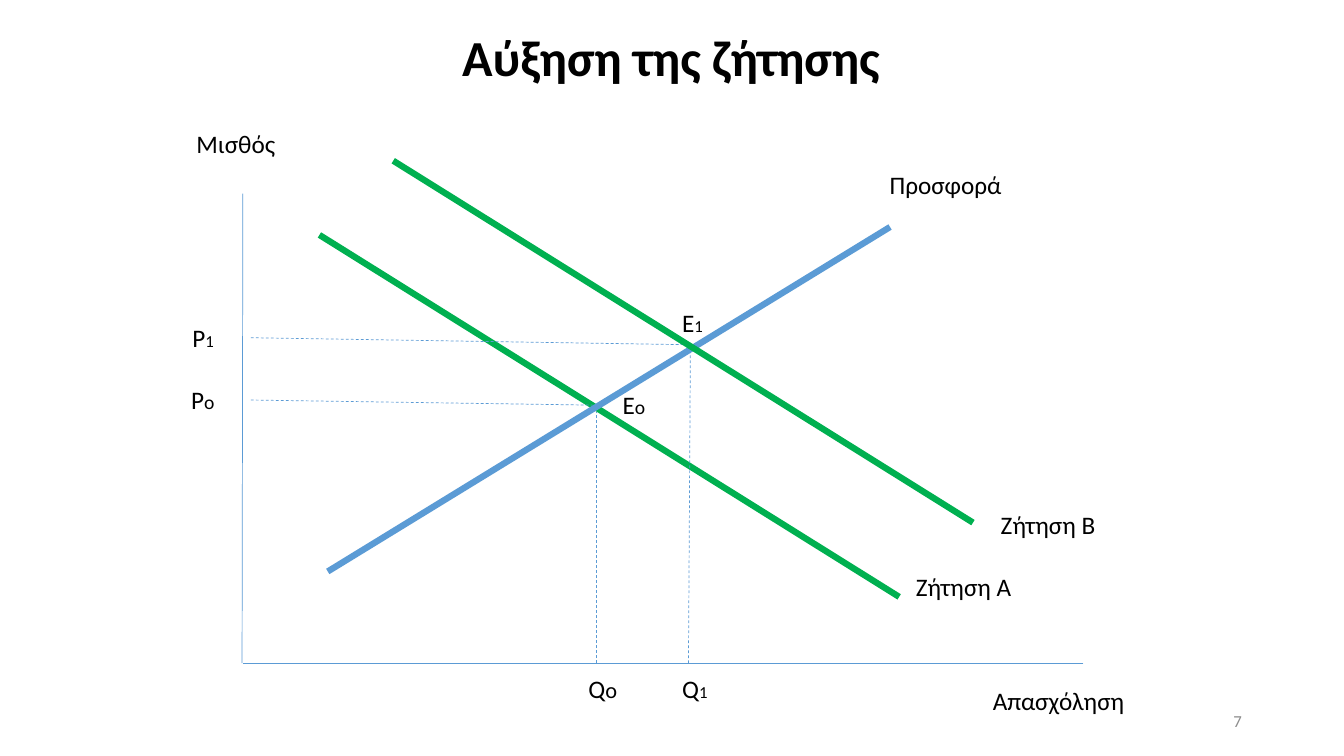
from dataclasses import dataclass

from lxml.etree import SubElement
from pptx import Presentation
from pptx.dml.color import RGBColor
from pptx.enum.dml import MSO_LINE
from pptx.enum.shapes import MSO_CONNECTOR
from pptx.enum.text import MSO_ANCHOR, MSO_AUTO_SIZE, PP_ALIGN
from pptx.oxml.ns import qn
from pptx.util import Cm, Pt


@dataclass(frozen=True)
class Theme:
    font: str = "Calibri"
    text: RGBColor = RGBColor(0x00, 0x00, 0x00)
    muted: RGBColor = RGBColor(0x8C, 0x8C, 0x8C)
    blue: RGBColor = RGBColor(0x5B, 0x9B, 0xD5)
    green: RGBColor = RGBColor(0x00, 0xB0, 0x50)
    title_size: int = 36
    label_size: int = 18
    number_size: int = 12
    thin: float = 0.5
    thick: float = 4.5


THEME = Theme()
LABEL_HEIGHT = 1.02

# Chart geometry in centimetres
AXIS_X, AXIS_TOP, AXIS_Y, AXIS_END = 6.12, 4.88, 16.71, 27.3
DEMAND_A = (8.05, 5.92), (22.66, 15.04)
DEMAND_SHIFT = (1.86, -1.87)
SUPPLY = (8.26, 14.4), (22.43, 5.72)
GUIDE_START = 6.32


def add_run(paragraph, text, size, color=THEME.text, bold=False):
    run = paragraph.add_run()
    run.text = text
    run.font.name = THEME.font
    run.font.size = Pt(size)
    run.font.bold = bold
    run.font.color.rgb = color


def add_title(slide, text):
    title = slide.shapes.title
    title.left, title.top = Cm(5.97), Cm(0.64)
    title.width, title.height = Cm(21.89), Cm(1.73)
    title.text_frame.vertical_anchor = MSO_ANCHOR.MIDDLE
    paragraph = title.text_frame.paragraphs[0]
    paragraph.alignment = PP_ALIGN.CENTER
    paragraph.line_spacing = 0.9
    add_run(paragraph, text, THEME.title_size, bold=True)


def add_line(slide, start, end, color=THEME.blue, width=THEME.thin, dashed=False):
    line = slide.shapes.add_connector(
        MSO_CONNECTOR.STRAIGHT, *(Cm(value) for value in (*start, *end)))
    line.line.color.rgb = color
    line.line.width = Pt(width)
    if dashed:
        line.line.dash_style = MSO_LINE.DASH
    SubElement(line._element.spPr, qn("a:effectLst"))


def add_text_box(slide, left, top, width, wrap=True):
    box = slide.shapes.add_textbox(Cm(left), Cm(top), Cm(width), Cm(LABEL_HEIGHT))
    frame = box.text_frame
    frame.word_wrap = wrap
    return frame


def add_label(slide, left, top, width, text, index="", index_size=None):
    """Add a label; an index follows the letter in a smaller size."""
    frame = add_text_box(slide, left, top, width, wrap=not index)
    frame.auto_size = MSO_AUTO_SIZE.SHAPE_TO_FIT_TEXT
    paragraph = frame.paragraphs[0]
    add_run(paragraph, text, THEME.label_size)
    if index:
        add_run(paragraph, index, index_size)


def add_slide_number(slide, number):
    frame = add_text_box(slide, 23.93, 17.65, 7.62)
    frame.vertical_anchor = MSO_ANCHOR.MIDDLE
    paragraph = frame.paragraphs[0]
    paragraph.alignment = PP_ALIGN.RIGHT
    add_run(paragraph, number, THEME.number_size, THEME.muted)


def main():
    deck = Presentation()
    deck.slide_width, deck.slide_height = Cm(33.87), Cm(19.05)
    slide = deck.slides.add_slide(deck.slide_layouts[5])
    add_title(slide, "Αύξηση της ζήτησης")
    add_slide_number(slide, "7")

    # Axes
    add_line(slide, (AXIS_X, AXIS_TOP), (6.1, AXIS_Y))
    add_line(slide, (AXIS_END, AXIS_Y), (AXIS_X, AXIS_Y))

    # Original demand and supply
    add_line(slide, *DEMAND_A, THEME.green, THEME.thick)
    add_line(slide, *SUPPLY, THEME.blue, THEME.thick)

    # Guides from each equilibrium to the axes
    for start, end in (
        ((GUIDE_START, 10.08), (15.04, 10.21)),
        ((15.04, AXIS_Y), (15.04, 10.39)),
        ((GUIDE_START, 8.51), (17.58, 8.69)),
        ((17.35, AXIS_Y), (17.4, 8.69)),
    ):
        add_line(slide, start, end, dashed=True)

    # Demand after the increase, parallel to the first
    shift_x, shift_y = DEMAND_SHIFT
    demand_b = [(x + shift_x, y + shift_y) for x, y in DEMAND_A]
    add_line(slide, *demand_b, THEME.green, THEME.thick)

    # Axis, curve and equilibrium labels
    for label in (
        (4.7, 3.12, 2.84, "Μισθός"),
        (24.77, 17.15, 3.96, "Απασχόληση"),
        (22.17, 4.14, 4.7, "Προσφορά"),
        (22.83, 14.27, 4.09, "Ζήτηση Α"),
        (24.97, 12.7, 4.47, "Ζήτηση Β"),
        (4.57, 9.55, 1.12, "P", "o", 14),
        (14.58, 16.84, 1.24, "Q", "o", 16),
        (15.44, 9.68, 1.09, "E", "o", 14),
        (4.6, 8, 1.07, "P", "1", 12),
        (16.94, 16.84, 1.17, "Q", "1", 12),
        (16.94, 7.62, 1.04, "E", "1", 12),
    ):
        add_label(slide, *label)

    deck.save("out.pptx")


if __name__ == "__main__":
    main()
